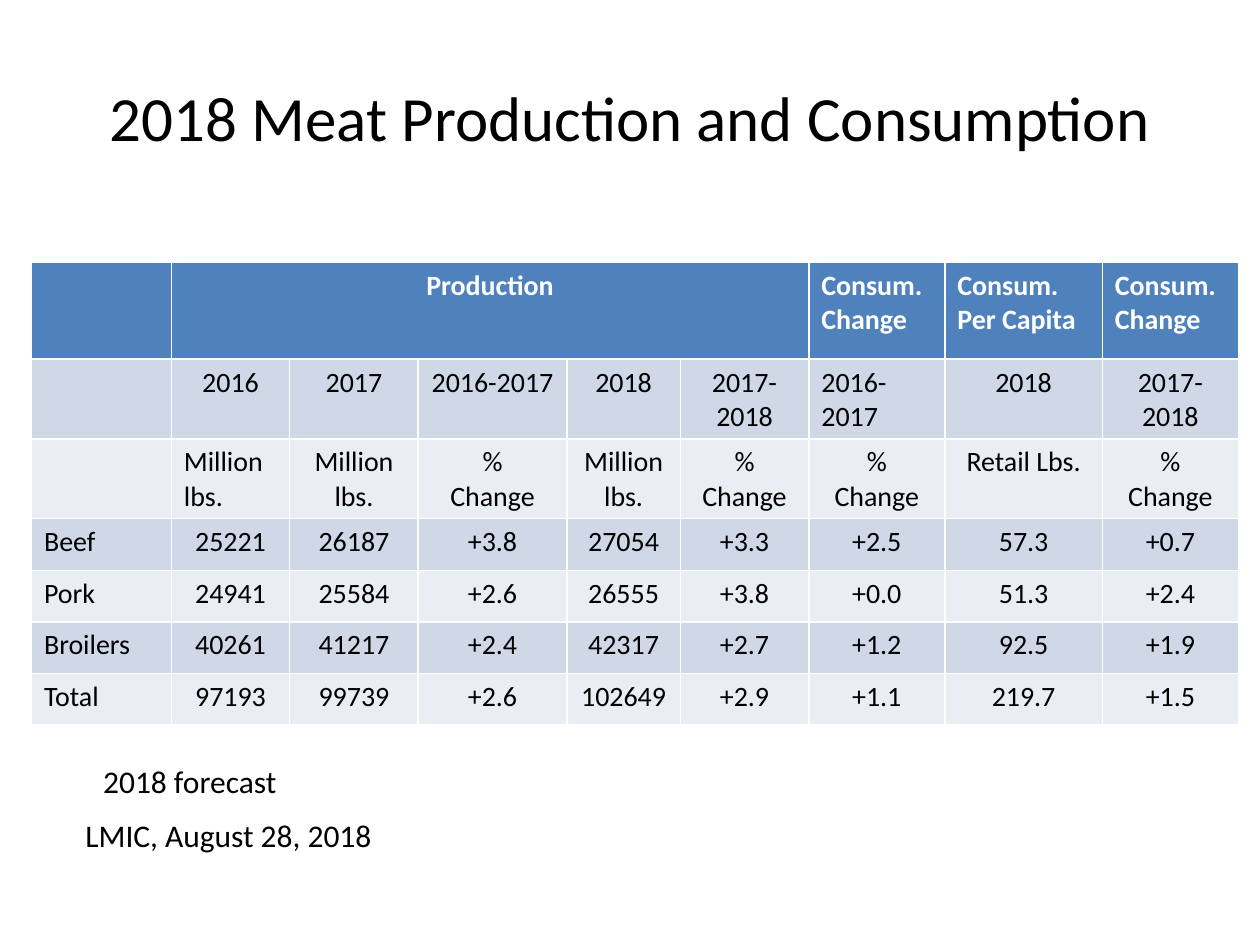
import pptx
import pptx.util
import pptx.dml.color
import pptx.enum.text

Inches, Pt = pptx.util.Inches, pptx.util.Pt
Align = pptx.enum.text.PP_ALIGN
Anchor = pptx.enum.text.MSO_ANCHOR

INK = {"head": "4F81BD", "dark": "D0D8E8", "light": "E9EDF4",
       "white": "FFFFFF", "black": "000000"}
WIDE, HIGH = 10, 7.5


def tone(name):
    return pptx.dml.color.RGBColor.from_string(INK[name])


def write(frame, text, size, align=Align.LEFT, ink="black", bold=False):
    """Put each line of text in its own paragraph, one run each."""
    frame.word_wrap = True
    for i, line in enumerate(text.split("\n")):
        para = frame.paragraphs[0] if i == 0 else frame.add_paragraph()
        para.alignment = align
        run = para.add_run()
        run.text = line
        run.font.name = "Calibri"
        run.font.size = Pt(size)
        run.font.bold = bold
        run.font.color.rgb = tone(ink)


deck = pptx.Presentation()
deck.slide_width, deck.slide_height = Inches(WIDE), Inches(HIGH)
slide = deck.slides.add_slide(deck.slide_layouts[6])

# Title, centred across the page
title = slide.shapes.add_textbox(
    Inches(0.05 * WIDE), Inches(0.04 * HIGH),
    Inches(0.9 * WIDE), Inches(HIGH / 6)).text_frame
title.vertical_anchor = Anchor.MIDDLE
write(title, "2018 Meat Production and Consumption", 36, Align.CENTER)

# Table: header, two rows of labels, then one row for each meat
rows = [
    ["", "Production", "", "", "", "", "Consum. Change",
     "Consum.\nPer Capita", "Consum.\nChange"],
    ["", "2016", "2017", "2016-2017", "2018", "2017-\n2018", "2016-2017",
     "2018", "2017-2018"],
    ["", "Million lbs.", "Million lbs.", "%\nChange", "Million\nlbs.",
     "%\nChange", "%\nChange", "Retail Lbs.", "%\nChange"],
    ["Beef", "25221", "26187", "+3.8", "27054", "+3.3", "+2.5", "57.3", "+0.7"],
    ["Pork", "24941", "25584", "+2.6", "26555", "+3.8", "+0.0", "51.3", "+2.4"],
    ["Broilers", "40261", "41217", "+2.4", "42317", "+2.7", "+1.2", "92.5", "+1.9"],
    ["Total", "97193", "99739", "+2.6", "102649", "+2.9", "+1.1", "219.7", "+1.5"],
]
cols = [1.11, 0.94, 1.02, 1.18, 0.9, 1.02, 1.08, 1.25, 1.08]
tall = [0.77] + [0.41] * (len(rows) - 1)
left = {(0, 6), (0, 7), (0, 8), (1, 6), (2, 1)}

table = slide.shapes.add_table(
    len(rows), len(cols), Inches(0.025 * WIDE), Inches(2.08),
    Inches(sum(cols)), Inches(sum(tall))).table
for col, width in zip(table.columns, cols):
    col.width = Inches(width)
for row, height in zip(table.rows, tall):
    row.height = Inches(height)
table.cell(0, 1).merge(table.cell(0, 5))

for r, row in enumerate(rows):
    top = r == 0
    for c, text in enumerate(row):
        cell = table.cell(r, c)
        cell.fill.solid()
        cell.fill.fore_color.rgb = tone(
            "head" if top else "dark" if r % 2 else "light")
        if text:
            align = Align.LEFT if c == 0 or (r, c) in left else Align.CENTER
            write(cell.text_frame, text, 16, align,
                  "white" if top else "black", top)

# Notes under the table
for text, x, y, width in [("LMIC, August 28, 2018", 0.058, 0.857, 0.308),
                          ("2018 forecast", 0.072, 0.8, 0.358)]:
    note = slide.shapes.add_textbox(
        Inches(x * WIDE), Inches(y * HIGH),
        Inches(width * WIDE), Inches(0.4)).text_frame
    write(note, text, 18)

deck.save("out.pptx")
